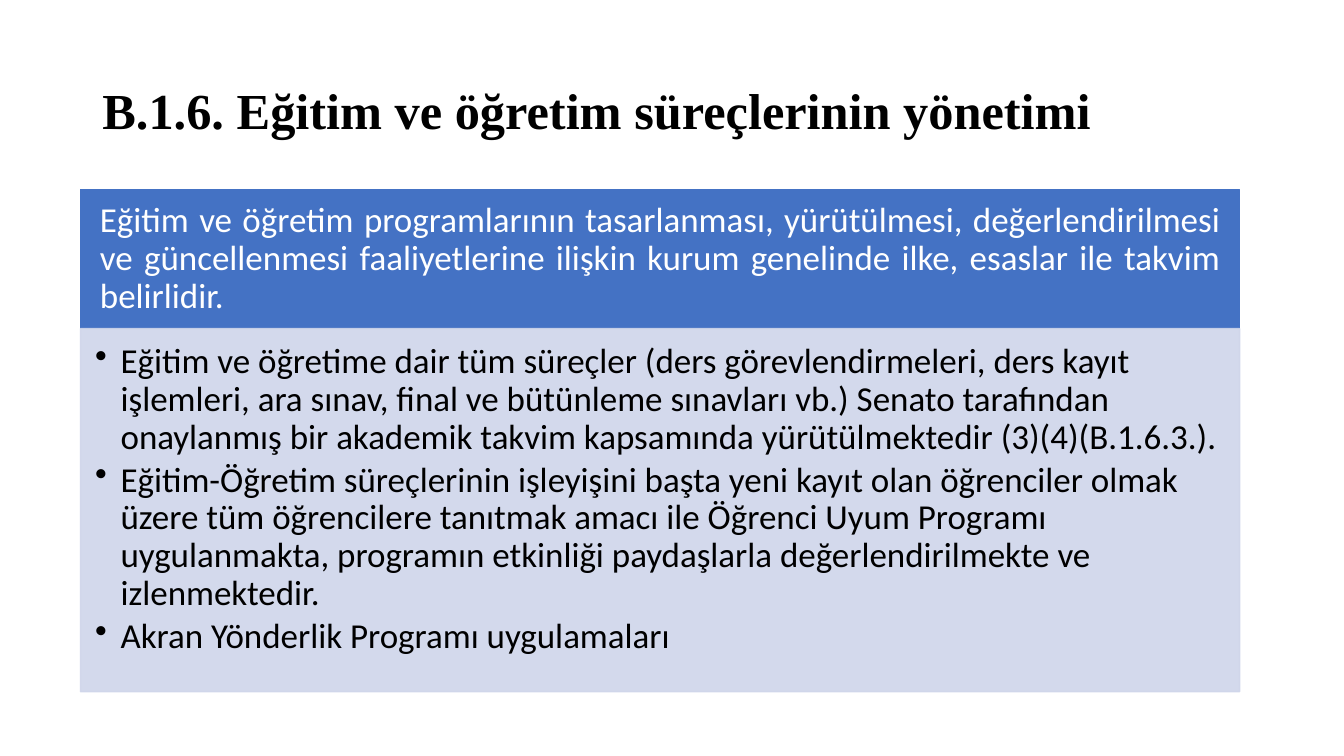
"""Build the slide on managing education and teaching processes."""
from dataclasses import dataclass

import lxml.etree
import pptx
import pptx.enum.shapes
import pptx.oxml.ns
import pptx.slide
import pptx.text.text
from pptx.dml.color import RGBColor
from pptx.enum.text import MSO_ANCHOR, PP_ALIGN
from pptx.util import Cm, Pt

BLACK = RGBColor(0x00, 0x00, 0x00)
WHITE = RGBColor(0xFF, 0xFF, 0xFF)
BLUE = RGBColor(0x44, 0x72, 0xC4)
PALE = RGBColor(0xCF, 0xD5, 0xEA)

LEFT, WIDTH = 2.03, 29.21


@dataclass(frozen=True)
class Style:
    """Hold the look of a text."""
    font: str
    size: float
    color: RGBColor
    bold: bool = False
    align: PP_ALIGN = PP_ALIGN.LEFT
    after: float = 0
    bullet: bool = False


@dataclass(frozen=True)
class Panel:
    """Describe one filled block of text."""
    top: float
    height: float
    fill: RGBColor
    alpha: int
    anchor: MSO_ANCHOR
    inset: tuple[float, float, float, float]
    style: Style
    lines: tuple[str, ...]


TITLE = Style("Times New Roman", 36, BLACK, bold=True)
HEAD = Style("Calibri", 25, WHITE, align=PP_ALIGN.JUSTIFY)
BODY = Style("Calibri", 25, BLACK, after=3.75, bullet=True)

PANELS = (
    Panel(4.78, 3.5, BLUE, 100, MSO_ANCHOR.MIDDLE, (0.49, 0.28, 0.49, 0.28), HEAD, (
        "Eğitim ve öğretim programlarının tasarlanması, yürütülmesi, "
        "değerlendirilmesi ve güncellenmesi faaliyetlerine ilişkin kurum "
        "genelinde ilke, esaslar ile takvim belirlidir.",
    )),
    Panel(8.28, 9.15, PALE, 90, MSO_ANCHOR.TOP, (0.37, 0.37, 0.49, 0.56), BODY, (
        "Eğitim ve öğretime dair tüm süreçler (ders görevlendirmeleri, ders "
        "kayıt işlemleri, ara sınav, final ve bütünleme sınavları vb.) Senato "
        "tarafından onaylanmış bir akademik takvim kapsamında "
        "yürütülmektedir (3)(4)(B.1.6.3.).",
        "Eğitim-Öğretim süreçlerinin işleyişini başta yeni kayıt olan "
        "öğrenciler olmak üzere tüm öğrencilere tanıtmak amacı ile Öğrenci "
        "Uyum Programı uygulanmakta, programın etkinliği paydaşlarla "
        "değerlendirilmekte ve izlenmektedir.",
        "Akran Yönderlik Programı uygulamaları",
    )),
)


def add_bullet(para: pptx.text.text._Paragraph) -> None:
    """Give a paragraph a round bullet and a hanging indent."""
    props = para._p.get_or_add_pPr()
    indent = Cm(0.64)
    props.set("marL", str(int(indent)))
    props.set("indent", str(-int(indent)))
    mark = lxml.etree.SubElement(props, pptx.oxml.ns.qn("a:buChar"))
    mark.set("char", "•")


def write(frame: pptx.text.text.TextFrame, lines: tuple[str, ...], style: Style) -> None:
    """Fill a text frame with styled paragraphs."""
    frame.word_wrap = True
    frame.text = "\n".join(lines)
    for para in frame.paragraphs:
        if style.bullet:
            add_bullet(para)
        para.alignment = style.align
        para.line_spacing = 0.9
        para.space_after = Pt(style.after)
        for run in para.runs:
            run.font.name = style.font
            run.font.size = Pt(style.size)
            run.font.bold = style.bold
            run.font.color.rgb = style.color


def add_title(slide: pptx.slide.Slide, text: str) -> None:
    """Draw the slide title."""
    box = slide.shapes.add_textbox(Cm(2.33), Cm(1.01), Cm(WIDTH), Cm(3.68))
    box.text_frame.vertical_anchor = MSO_ANCHOR.MIDDLE
    write(box.text_frame, (text,), TITLE)


def add_panel(slide: pptx.slide.Slide, panel: Panel) -> None:
    """Draw a filled block with its text."""
    shape = slide.shapes.add_shape(
        pptx.enum.shapes.MSO_SHAPE.RECTANGLE,
        Cm(LEFT), Cm(panel.top), Cm(WIDTH), Cm(panel.height),
    )
    shape.shadow.inherit = False
    shape.fill.solid()
    shape.fill.fore_color.rgb = panel.fill
    shape.line.color.rgb = panel.fill
    shape.line.width = Pt(1)
    if panel.alpha < 100:
        for color in shape._element.spPr.iter(pptx.oxml.ns.qn("a:srgbClr")):
            alpha = lxml.etree.SubElement(color, pptx.oxml.ns.qn("a:alpha"))
            alpha.set("val", str(panel.alpha * 1000))
    frame = shape.text_frame
    frame.vertical_anchor = panel.anchor
    left, top, right, bottom = panel.inset
    frame.margin_left, frame.margin_top = Cm(left), Cm(top)
    frame.margin_right, frame.margin_bottom = Cm(right), Cm(bottom)
    write(frame, panel.lines, panel.style)


def main() -> None:
    """Build and save the slide."""
    deck = pptx.Presentation()
    deck.slide_width, deck.slide_height = Cm(33.87), Cm(19.05)
    slide = deck.slides.add_slide(deck.slide_layouts[6])
    add_title(slide, "B.1.6. Eğitim ve öğretim süreçlerinin yönetimi")
    for panel in PANELS:
        add_panel(slide, panel)
    deck.save("out.pptx")


if __name__ == "__main__":
    main()
